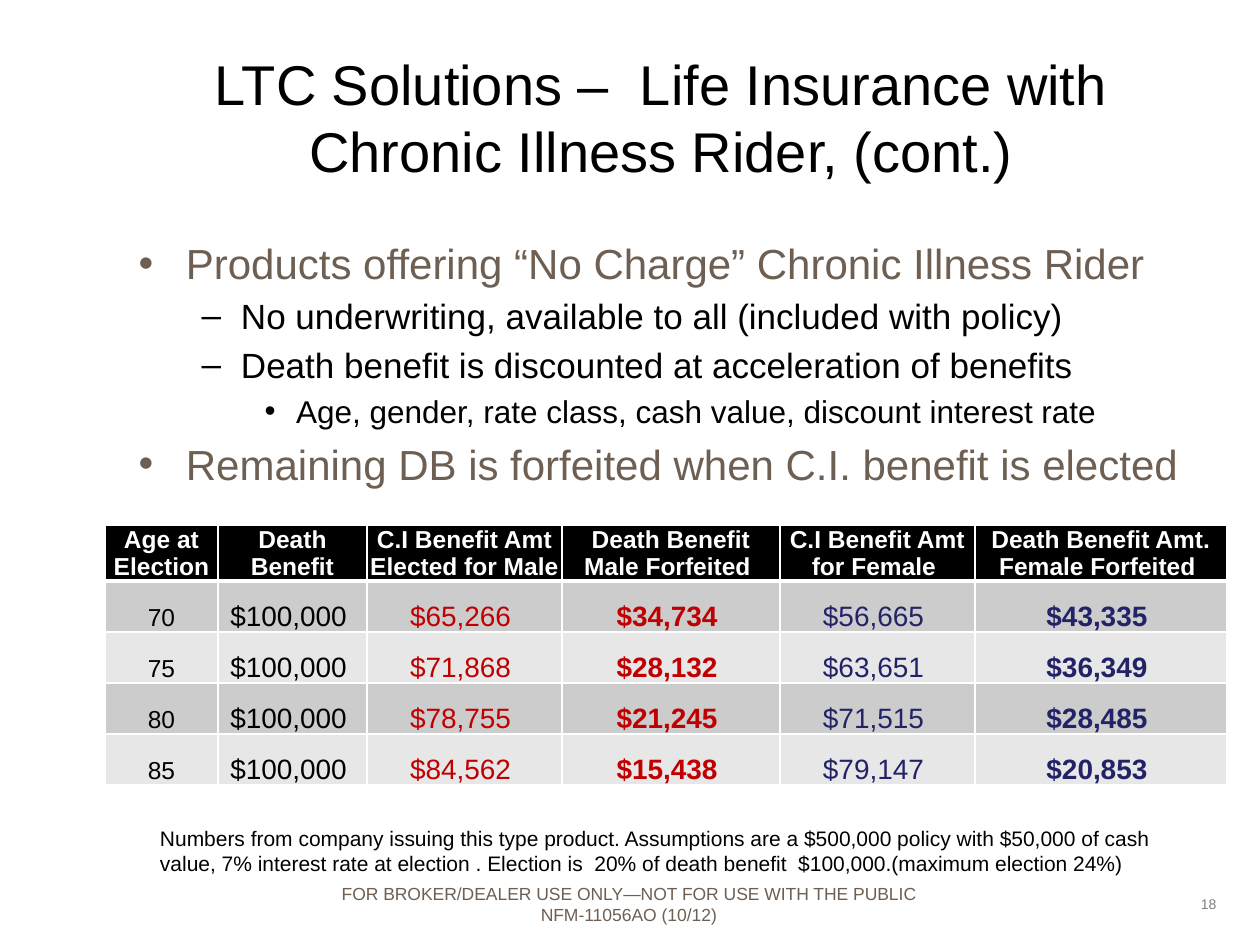
from lxml.etree import SubElement
from pptx import Presentation
from pptx.dml.color import RGBColor
from pptx.enum.text import MSO_ANCHOR as Anchor, MSO_AUTO_SIZE as AutoSize, PP_ALIGN as Align
from pptx.oxml.ns import qn
from pptx.util import Pt

PX = 914400 / 126
FONT = "Arial"
BLACK = RGBColor(0x00, 0x00, 0x00)
WHITE = RGBColor(0xFF, 0xFF, 0xFF)
TAUPE = RGBColor(0x6E, 0x5F, 0x53)
GRAY = RGBColor(0x80, 0x80, 0x80)
RED = RGBColor(0xC0, 0x00, 0x00)
NAVY = RGBColor(0x22, 0x22, 0x67)
BAND_DARK = RGBColor(0xCC, 0xCC, 0xCC)
BAND_LIGHT = RGBColor(0xE7, 0xE7, 0xE7)

TITLE = "LTC Solutions –  Life Insurance with Chronic Illness Rider, (cont.)"
BULLETS = [
    (0, "Products offering “No Charge” Chronic Illness Rider"),
    (1, "No underwriting, available to all (included with policy)"),
    (1, "Death benefit is discounted at acceleration of benefits"),
    (2, "Age, gender, rate class, cash value, discount interest rate"),
    (0, "Remaining DB is forfeited when C.I. benefit is elected"),
]
LEVEL_FORMATS = [dict(size=24, color=TAUPE), dict(size=20), dict(size=18)]
HEADERS = ["Age at Election", "Death Benefit", "C.I Benefit Amt Elected for Male",
           "Death Benefit Male Forfeited ", "C.I Benefit Amt for Female ",
           "Death Benefit Amt. Female Forfeited "]
ROWS = [
    ["70", "$100,000 ", "$65,266 ", "$34,734 ", "$56,665 ", "$43,335 "],
    ["75", "$100,000 ", "$71,868 ", "$28,132 ", "$63,651 ", "$36,349 "],
    ["80", "$100,000 ", "$78,755 ", "$21,245 ", "$71,515 ", "$28,485 "],
    ["85", "$100,000 ", "$84,562 ", "$15,438 ", "$79,147 ", "$20,853 "],
]
COLUMN_WIDTHS = [113, 149, 195, 218, 195, 252]
COLUMN_FORMATS = [dict(size=14), dict(size=16), dict(size=16, color=RED),
                  dict(size=16, color=RED, bold=True), dict(size=16, color=NAVY),
                  dict(size=16, color=NAVY, bold=True)]
NOTE = ("Numbers from company issuing this type product. Assumptions are a $500,000 policy "
        "with $50,000 of cash value, 7% interest rate at election . Election is  20% of death "
        "benefit  $100,000.(maximum election 24%)")
FOOTER = ["FOR BROKER/DEALER USE ONLY—NOT FOR USE WITH THE PUBLIC", "NFM-11056AO (10/12)"]


def px(length):
    """Turn pixels into EMU."""
    return round(length * PX)


def write(para, text, size=14, color=BLACK, bold=False, align=None):
    """Add formatted text to a paragraph."""
    span = para.add_run()
    span.text = text
    span.font.name = FONT
    span.font.size = Pt(size)
    span.font.bold = bold
    span.font.color.rgb = color
    if align is not None:
        para.alignment = align


def write_lines(frame, lines):
    """Fill a text frame with one paragraph for each (level, text, format)."""
    for index, (level, text, style) in enumerate(lines):
        para = frame.add_paragraph() if index else frame.paragraphs[0]
        para.level = level
        write(para, text, **style)


def place(shape, box):
    """Move and size a shape to its box."""
    shape.left, shape.top, shape.width, shape.height = map(px, box)


def fill_placeholder(shape, box, lines):
    """Place a template placeholder and write its lines."""
    place(shape, box)
    shape.text_frame.auto_size = AutoSize.NONE
    write_lines(shape.text_frame, lines)


def add_text(page, box, lines, anchor=Anchor.TOP, left_inset=13, **style):
    """Add a wrapping text box."""
    frame = page.shapes.add_textbox(*map(px, box)).text_frame
    frame.word_wrap = True
    frame.vertical_anchor = anchor
    frame.margin_left = px(left_inset)
    write_lines(frame, [(0, line, style) for line in lines])


def border_cell(cell, bottom):
    """Draw white borders around a cell, with the given bottom width in points."""
    properties = cell._tc.get_or_add_tcPr()
    for side, width in dict(L=1, R=1, T=1, B=bottom).items():
        line = SubElement(properties, qn(f"a:ln{side}"), w=str(Pt(width)))
        fill = SubElement(line, qn("a:solidFill"))
        SubElement(fill, qn("a:srgbClr"), val=str(WHITE))


def fill_cell(cell, text, background, bottom=1, **style):
    """Format one table cell and write its text."""
    border_cell(cell, bottom)
    cell.fill.solid()
    cell.fill.fore_color.rgb = background
    cell.margin_left = cell.margin_right = cell.margin_top = px(1)
    cell.margin_bottom = 0
    cell.vertical_anchor = Anchor.BOTTOM
    write(cell.text_frame.paragraphs[0], text, align=Align.CENTER, **style)


def add_benefit_table(page, left, top, row_height):
    """Add the table of elected and forfeited benefits by age."""
    count = len(ROWS) + 1
    box = (left, top, sum(COLUMN_WIDTHS), count * row_height)
    table = page.shapes.add_table(count, len(HEADERS), *map(px, box)).table
    for column, width in enumerate(COLUMN_WIDTHS):
        table.columns[column].width = px(width)
        fill_cell(table.cell(0, column), HEADERS[column], BLACK, bottom=3, color=WHITE, bold=True)
        for row, values in enumerate(ROWS, 1):
            band = BAND_DARK if row % 2 else BAND_LIGHT
            fill_cell(table.cell(row, column), values[column], band, **COLUMN_FORMATS[column])


def build_page(deck):
    """Build the chronic illness rider slide."""
    page = deck.slides.add_slide(deck.slide_layouts[1])
    fill_placeholder(page.shapes.title, (126, 38, 1071, 157), [(0, TITLE, dict(size=32))])
    fill_placeholder(page.placeholders[1], (126, 231, 1071, 620),
                     [(level, text, LEVEL_FORMATS[level]) for level, text in BULLETS])
    add_benefit_table(page, 105, 525, 51)
    add_text(page, (147, 819, 1029, 64), [NOTE], size=12)
    add_text(page, (315, 882, 640, 44), FOOTER, Anchor.MIDDLE, 0,
             size=10, color=TAUPE, align=Align.CENTER)
    add_text(page, (1166, 882, 63, 44), ["18"], Anchor.MIDDLE, 0,
             size=8, color=GRAY, align=Align.RIGHT)


def main():
    """Create and save the deck."""
    deck = Presentation()
    deck.slide_width, deck.slide_height = px(1260), px(945)
    build_page(deck)
    deck.save("out.pptx")


if __name__ == "__main__":
    main()
